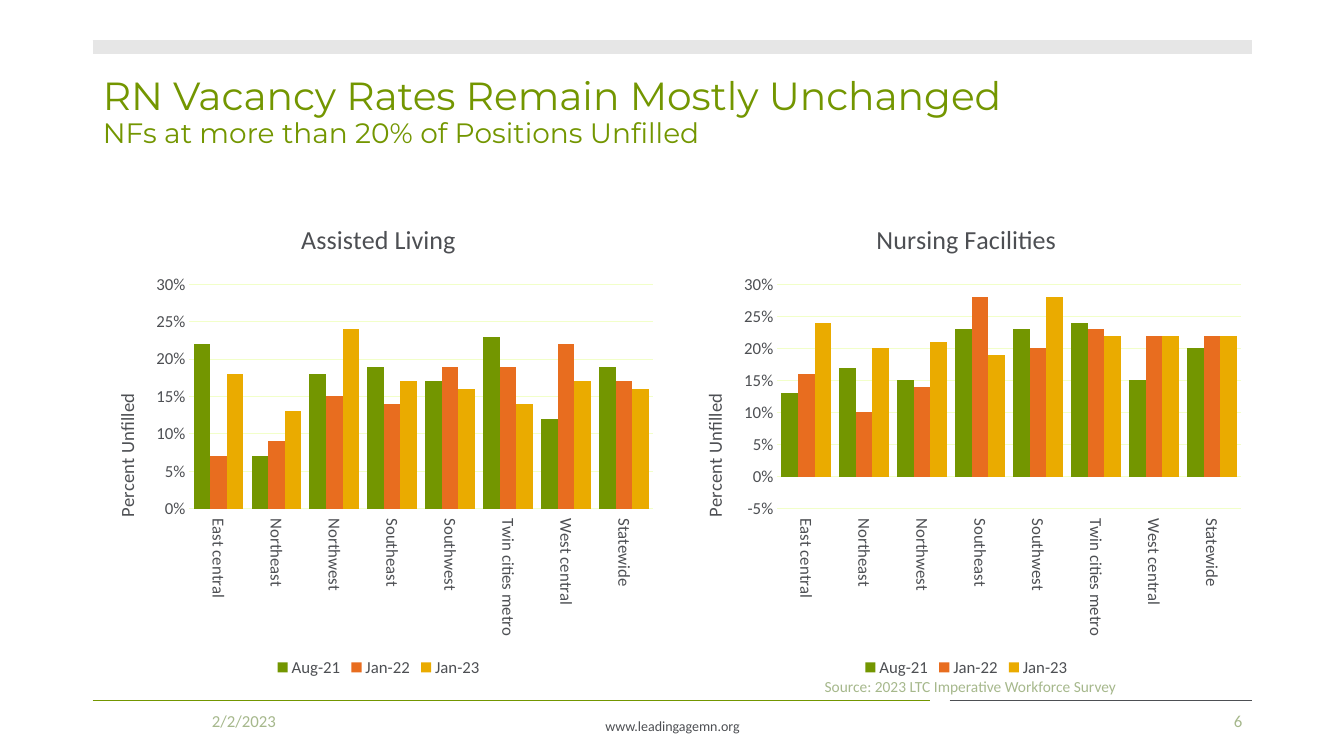
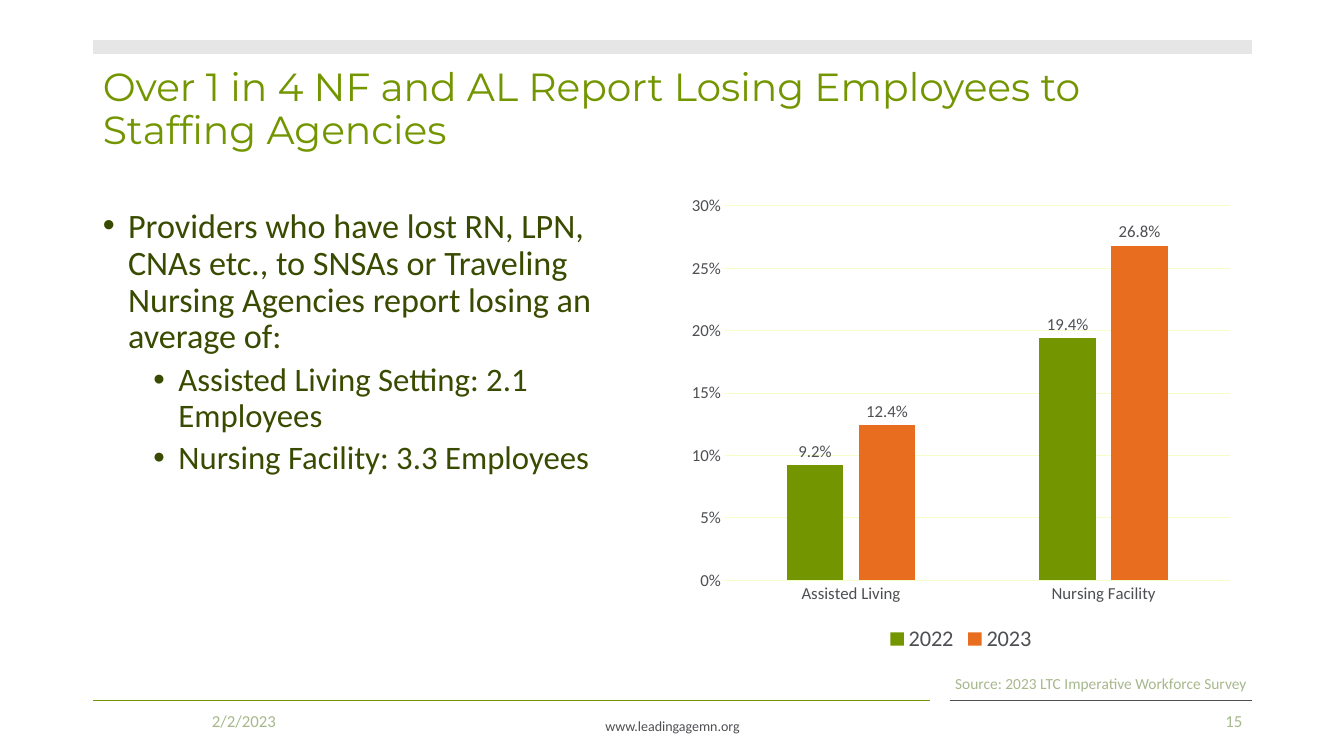
import lxml.etree
import pptx
import pptx.chart.data
import pptx.dml.color
import pptx.enum.chart
import pptx.enum.shapes
import pptx.enum.text
import pptx.oxml.ns
import pptx.util

PX = 9144  # 100 px to the inch
COLORS = {
    "green": "739600",
    "orange": "E86D1F",
    "gold": "EAAB00",
    "dark_green": "394B00",
    "sage": "A6B88C",
    "gray": "4D4F53",
    "band": "E6E6E6",
    "grid": "F2FFC9",
}
RGB = {name: pptx.dml.color.RGBColor.from_string(value) for name, value in COLORS.items()}
SERIES_COLORS = ("green", "orange", "gold")
LEFT, RIGHT, FOOTER_TOP = 92, 1242, 695
SOURCE = "Source: 2023 LTC Imperative Workforce Survey"
ALIGN = pptx.enum.text.PP_ALIGN
MIDDLE = pptx.enum.text.MSO_ANCHOR.MIDDLE
qn = pptx.oxml.ns.qn


def write_text(frame, text, *, sizes, color, font="Calibri", align=ALIGN.LEFT,
               anchor=None, line_spacing=None, before=0, level=0, bullet_margin=None):
    """Add a paragraph; each line split off by a line break takes its own size."""
    paragraph = frame.add_paragraph() if frame.text else frame.paragraphs[0]
    paragraph.text = text
    paragraph.level = level
    if bullet_margin is not None:
        properties = paragraph._p.get_or_add_pPr()
        properties.set("marL", str(bullet_margin * PX))
        properties.set("indent", str(-25 * PX))
        lxml.etree.SubElement(properties, qn("a:buChar")).set("char", "•")
    paragraph.alignment = align
    paragraph.space_before = pptx.util.Pt(before)
    if line_spacing:
        paragraph.line_spacing = line_spacing
    if anchor is not None:
        frame.vertical_anchor = anchor
        frame.word_wrap = True
    for run, size in zip(paragraph.runs, sizes):
        run.font.name = font
        run.font.size = pptx.util.Pt(size)
        run.font.bold = False
        run.font.color.rgb = RGB[color]


def add_column_chart(slide, box, categories, series, *, low, gap, overlap=0, legend_size=12,
                     title=None, value_title=None, upright_labels=False, data_labels=False):
    data = pptx.chart.data.CategoryChartData(number_format="0.0%" if data_labels else "0%")
    data.categories = categories
    for name, values in series.items():
        data.add_series(name, values)
    chart = slide.shapes.add_chart(pptx.enum.chart.XL_CHART_TYPE.COLUMN_CLUSTERED,
                                   *(length * PX for length in box), data).chart
    chart.font.name = "Calibri"
    chart.font.size = pptx.util.Pt(10)
    chart.font.color.rgb = RGB["gray"]

    chart.has_title = title is not None
    if title:
        write_text(chart.chart_title.text_frame, title, sizes=[18.6], color="gray",
                   align=ALIGN.CENTER)
        chart.chart_title.include_in_layout = False
    chart.has_legend = True
    chart.legend.position = pptx.enum.chart.XL_LEGEND_POSITION.BOTTOM
    chart.legend.include_in_layout = False

    category_axis, value_axis = chart.category_axis, chart.value_axis
    for axis in (category_axis, value_axis):
        axis.major_tick_mark = pptx.enum.chart.XL_TICK_MARK.NONE
        axis.minor_tick_mark = pptx.enum.chart.XL_TICK_MARK.NONE
    fonts = [(category_axis.tick_labels.font, 12), (value_axis.tick_labels.font, 12),
             (chart.legend.font, legend_size)]

    value_axis.minimum_scale = low
    value_axis.maximum_scale = 0.3
    value_axis.major_unit = 0.05
    value_axis.tick_labels.number_format = "0%"
    value_axis.tick_labels.number_format_is_linked = False
    value_axis.format.line.fill.background()
    value_axis.has_major_gridlines = True
    for line in (category_axis.format.line, value_axis.major_gridlines.format.line):
        line.color.rgb = RGB["grid"]
        line.width = pptx.util.Pt(0.75)
    if value_title:
        caption = value_axis.axis_title.text_frame
        write_text(caption, value_title, sizes=[13.3], color="gray", align=ALIGN.CENTER)
        caption._txBody.bodyPr.set("rot", "-5400000")
        caption._txBody.bodyPr.set("vert", "horz")
    if upright_labels:
        category_axis.tick_label_position = pptx.enum.chart.XL_TICK_LABEL_POSITION.LOW
        label_body = category_axis._element.find(qn("c:txPr")).find(qn("a:bodyPr"))
        label_body.set("rot", "5400000")
        label_body.set("vert", "horz")

    plot = chart.plots[0]
    plot.vary_by_categories = False
    plot.gap_width = gap
    plot.overlap = overlap
    for columns, color in zip(plot.series, SERIES_COLORS):
        columns.invert_if_negative = False
        columns.format.fill.solid()
        columns.format.fill.fore_color.rgb = RGB[color]
        if data_labels:
            labels = columns.data_labels
            labels.show_value = True
            labels.number_format = "0.0%"
            labels.number_format_is_linked = False
            labels.position = pptx.enum.chart.XL_LABEL_POSITION.OUTSIDE_END
            fonts.append((labels.font, 12))
    for font, size in fonts:
        font.name = "Calibri"
        font.size = pptx.util.Pt(size)
        font.color.rgb = RGB["gray"]


deck = pptx.Presentation()
deck.slide_width = 1333 * PX
deck.slide_height = 750 * PX
master = deck.slide_master
title_style = master.element.find(".//" + qn("p:titleStyle")).find(qn("a:lvl1pPr"))
title_style.find(qn("a:defRPr")).set("sz", "2800")

vacancy = deck.slides.add_slide(deck.slide_layouts.get_by_name("Title Only"))
agencies = deck.slides.add_slide(deck.slide_layouts.get_by_name("Title and Content"))

# Band, footer rules and web address: built on a slide, then moved to the master
shared = []
for start, end, y, color, width in (
    (LEFT, 922, FOOTER_TOP, "green", 1),
    (942, RIGHT, FOOTER_TOP, "gray", 1),
    (LEFT, RIGHT, 47, "band", 10),
):
    rule = vacancy.shapes.add_connector(pptx.enum.shapes.MSO_CONNECTOR.STRAIGHT,
                                        start * PX, y * PX, end * PX, y * PX)
    rule.line.color.rgb = RGB[color]
    rule.line.width = pptx.util.Pt(width)
    lxml.etree.SubElement(rule._element.spPr, qn("a:effectLst"))
    shared.append(rule)
address = vacancy.shapes.add_textbox(442 * PX, 707 * PX, 450 * PX, 28 * PX)
write_text(address.text_frame, "www.leadingagemn.org", sizes=[10], color="gray",
           align=ALIGN.CENTER, anchor=pptx.enum.text.MSO_ANCHOR.TOP)
shared.append(address)
for number, shape in enumerate(shared, start=100):
    shape._element.find(".//" + qn("p:cNvPr")).set("id", str(number))
    master.shapes.element.append(shape._element)

# Title, source, date and page number of each slide
for slide, title, title_sizes, title_top, source_box, source_align, page in (
    (vacancy,
     "RN Vacancy Rates Remain Mostly Unchanged\vNFs at more than 20% of Positions Unfilled",
     [28, 20], 40, (808, 661, 450, 40), ALIGN.LEFT, "6"),
    (agencies, "Over 1 in 4 NF and AL Report Losing Employees to Staffing Agencies",
     [28], 37, (867, 658, 450, 40), ALIGN.CENTER, "15"),
):
    heading = slide.shapes.title
    heading.left, heading.top = LEFT * PX, title_top * PX
    heading.width, heading.height = (RIGHT - LEFT) * PX, 145 * PX
    heading.text_frame.auto_size = pptx.enum.text.MSO_AUTO_SIZE.NONE
    write_text(heading.text_frame, title, sizes=title_sizes, color="green",
               font="Montserrat", anchor=MIDDLE, line_spacing=0.9)
    for text, box, size, align in (
        (SOURCE, source_box, 11, source_align),
        ("2/2/2023", (LEFT, FOOTER_TOP, 300, 40), 12, ALIGN.CENTER),
        (page, (942, FOOTER_TOP, 300, 40), 12, ALIGN.RIGHT),
    ):
        note = slide.shapes.add_textbox(*(length * PX for length in box))
        write_text(note.text_frame, text, sizes=[size], color="sage", align=align,
                   anchor=MIDDLE)

# RN vacancy rates by region
regions = ["East central", "Northeast", "Northwest", "Southeast", "Southwest",
           "Twin cities metro", "West central", "Statewide"]
for setting, left, low, rates in (
    ("Assisted Living", LEFT, 0, {
        "Aug-21": (0.22, 0.07, 0.18, 0.19, 0.17, 0.23, 0.12, 0.19),
        "Jan-22": (0.07, 0.09, 0.15, 0.14, 0.19, 0.19, 0.22, 0.17),
        "Jan-23": (0.18, 0.13, 0.24, 0.17, 0.16, 0.14, 0.17, 0.16),
    }),
    ("Nursing Facilities", 675, -0.05, {
        "Aug-21": (0.13, 0.17, 0.15, 0.23, 0.23, 0.24, 0.15, 0.2),
        "Jan-22": (0.16, 0.1, 0.14, 0.28, 0.2, 0.23, 0.22, 0.22),
        "Jan-23": (0.24, 0.2, 0.21, 0.19, 0.28, 0.22, 0.22, 0.22),
    }),
):
    add_column_chart(vacancy, (left, 200, 567, 476), regions, rates, low=low, gap=50,
                     title=setting, value_title="Percent Unfilled", upright_labels=True)

# Employees lost to staffing agencies
losses = agencies.placeholders[1]
losses.left, losses.top = LEFT * PX, 202 * PX
losses.width, losses.height = 567 * PX, 476 * PX
losses.text_frame.auto_size = pptx.enum.text.MSO_AUTO_SIZE.NONE
for text, size, level, margin, before in (
    ("Providers who have lost RN, LPN, CNAs etc., to SNSAs or Traveling Nursing Agencies "
     "report losing an average of:", 24.4, 0, 25, 0),
    ("Assisted Living Setting: 2.1 Employees", 23.4, 1, 75, 5),
    ("Nursing Facility: 3.3 Employees", 23.4, 1, 75, 5),
):
    write_text(losses.text_frame, text, sizes=[size], color="dark_green", line_spacing=0.9,
               before=before, level=level, bullet_margin=margin)
add_column_chart(agencies, (675, 185, 556, 467), ["Assisted Living", "Nursing Facility"],
                 {"2022": (0.092, 0.194), "2023": (0.124, 0.268)},
                 low=0, gap=219, overlap=-27, legend_size=16, data_labels=True)

deck.save("out.pptx")
